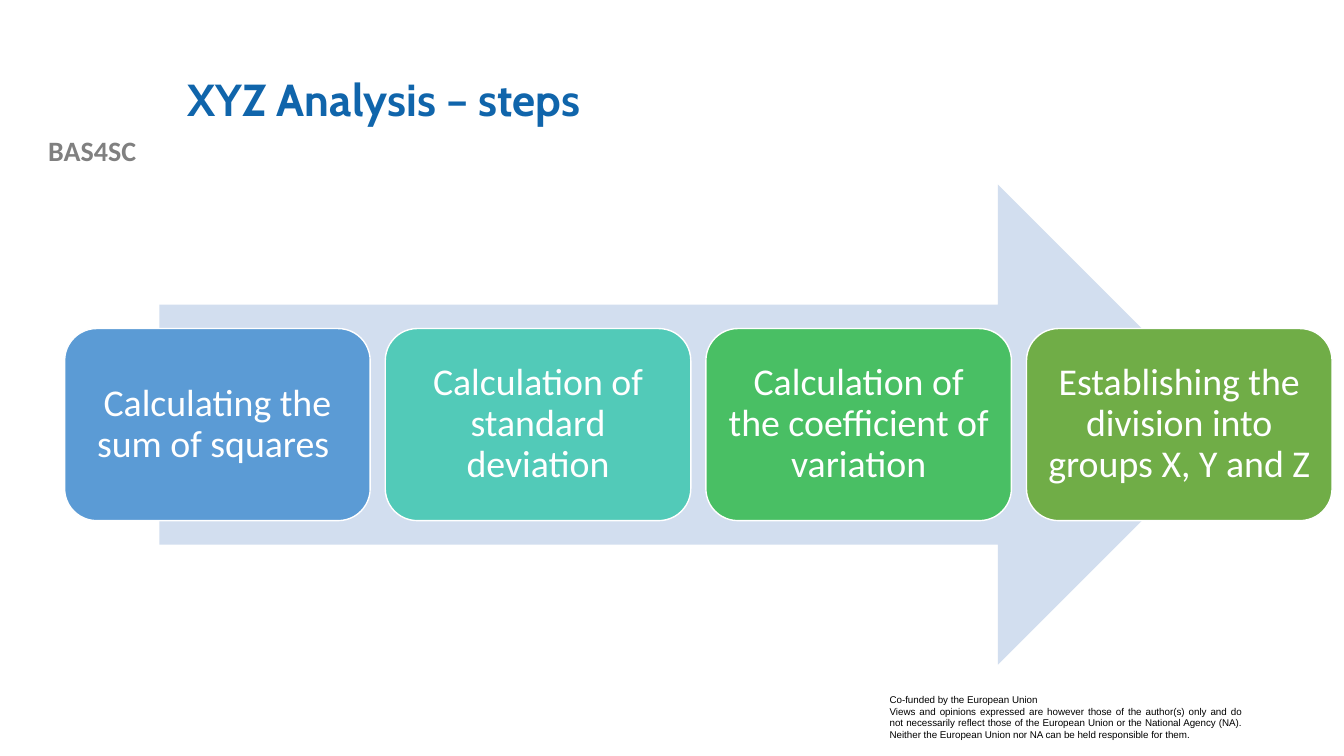
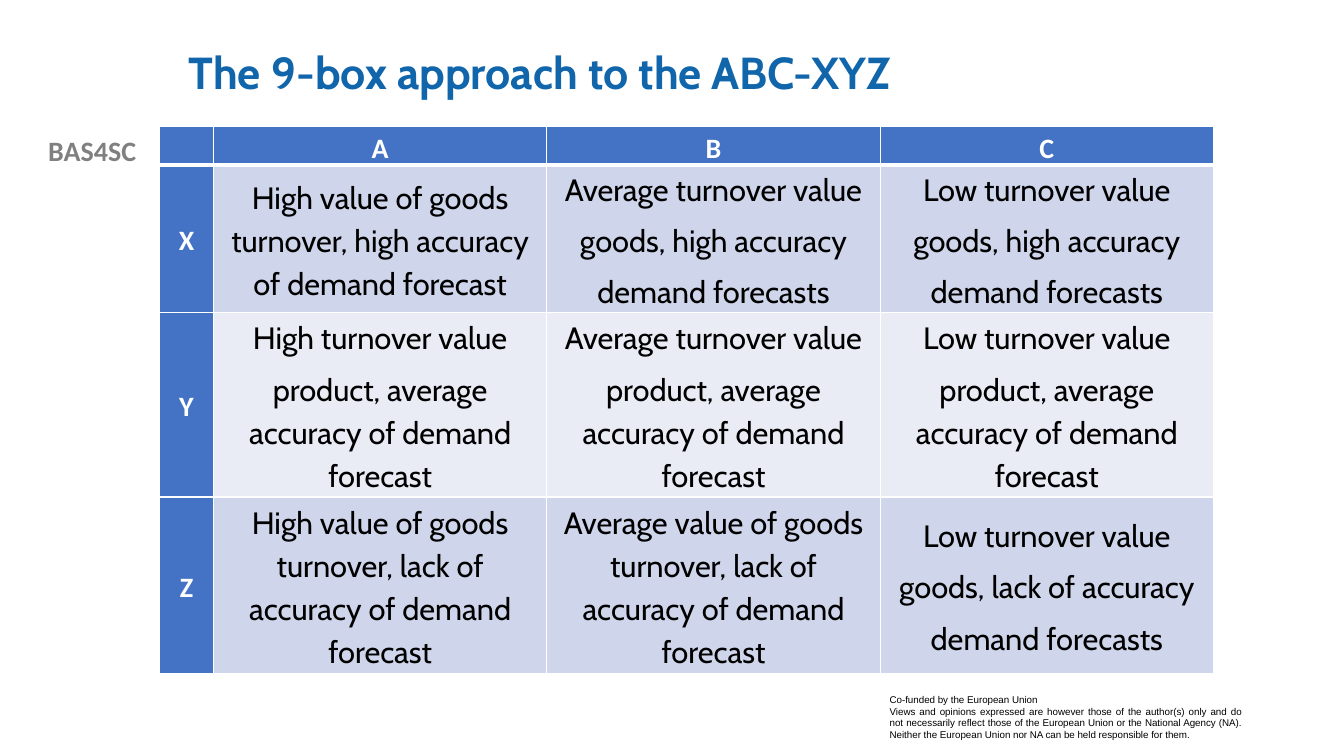
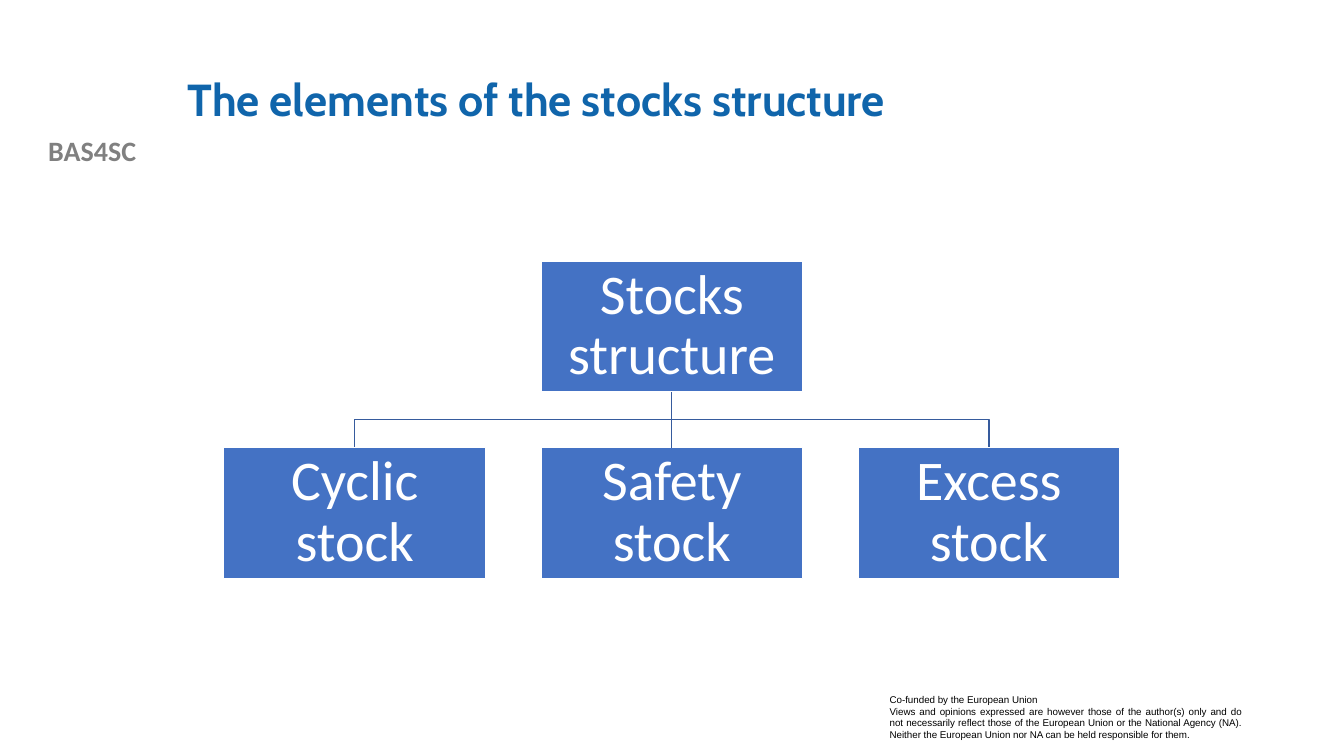
import pptx
import pptx.util
import pptx.dml.color
import pptx.enum.shapes
import pptx.enum.text
import pptx.oxml
import pptx.oxml.ns

Cm = pptx.util.Cm
Pt = pptx.util.Pt
MSO = pptx.enum.shapes.MSO_SHAPE
ALIGN = pptx.enum.text.PP_ALIGN
MIDDLE = pptx.enum.text.MSO_ANCHOR.MIDDLE
rgb = pptx.dml.color.RGBColor.from_string

BLUE = "4472C4"
WHITE = "FFFFFF"
LINE = "365B9D"


def write(tf, lines, size, font, color, bold=False, align=ALIGN.CENTER, spacing=0.9, after=0):
    tf.word_wrap = True
    for i, line in enumerate(lines):
        p = tf.paragraphs[0] if i == 0 else tf.add_paragraph()
        p.alignment = align
        p.line_spacing = spacing
        p.space_after = Pt(after)
        r = p.add_run()
        r.text = line
        r.font.size = Pt(size)
        r.font.name = font
        r.font.bold = bold
        r.font.color.rgb = rgb(color)


def add_box(s, kind, x, y, w, h, fill, line=None, inset=None):
    sp = s.shapes.add_shape(kind, Cm(x), Cm(y), Cm(w), Cm(h))
    sp.shadow.inherit = False
    sp.fill.solid()
    sp.fill.fore_color.rgb = rgb(fill)
    if line:
        sp.line.color.rgb = rgb(line)
        sp.line.width = Pt(1)
    else:
        sp.line.fill.background()
    tf = sp.text_frame
    tf.vertical_anchor = MIDDLE
    if inset is not None:
        tf.margin_left = tf.margin_right = tf.margin_top = tf.margin_bottom = Cm(inset)
    return sp


prs = pptx.Presentation()
prs.slide_width = Cm(33.87)
prs.slide_height = Cm(19.05)

FOOTER = [
    "Co-funded by the European Union",
    "Views and opinions expressed are however those of the author(s) only and do not necessarily "
    "reflect those of the European Union or the National Agency (NA). Neither the European Union "
    "nor NA can be held responsible for them.",
]
TITLES = [
    ("XYZ Analysis – steps", 4.47, 1.02, 27.08),
    ("The 9-box approach to the ABC-XYZ", 4.5, 0.33, 27.28),
    ("The elements of the stocks structure", 4.47, 1.02, 27.08),
]
slides = []
for title, x, y, w in TITLES:
    s = prs.slides.add_slide(prs.slide_layouts[5])
    sp = s.shapes.title
    sp.left, sp.top, sp.width, sp.height = Cm(x), Cm(y), Cm(w), Cm(3.1)
    tf = sp.text_frame
    tf.auto_size = pptx.enum.text.MSO_AUTO_SIZE.NONE
    tf.vertical_anchor = MIDDLE
    write(tf, [title], 32, "Cabin", "1065AB", True, ALIGN.LEFT)
    sp = s.shapes.add_textbox(0, Cm(3.25), Cm(4.65), Cm(1.12))
    write(sp.text_frame, ["BAS4SC"], 20, "Calibri", "808080", True, spacing=1.0)
    sp = add_box(s, MSO.RECTANGLE, 22.17, 17.35, 9.37, 1.45, WHITE)
    sp.text_frame.vertical_anchor = pptx.enum.text.MSO_ANCHOR.TOP
    write(sp.text_frame, FOOTER, 7, "Arial", "000000", align=ALIGN.JUSTIFY, spacing=1.0)
    slides.append(s)

s = slides[0]
add_box(s, MSO.RIGHT_ARROW, 4.02, 4.65, 27.18, 12.1, "D2DEEF")
STEPS = [
    ("Calculating the sum of squares ", "5B9BD5"),
    ("Calculation of standard deviation", "52CAB8"),
    ("Calculation of the coefficient of variation", "49BF64"),
    ("Establishing the division into groups X, Y and Z", "70AD47"),
]
for i, (text, color) in enumerate(STEPS):
    sp = add_box(s, MSO.ROUNDED_RECTANGLE, 1.63 + 8.08 * i, 8.28, 7.7, 4.84, color, WHITE, 0.27)
    write(sp.text_frame, [text], 27, "Calibri", WHITE)

s = slides[1]
ROWS = [
    [[], ["A"], ["B"], ["C"]],
    [
        ["X"],
        ["High value of goods turnover, high accuracy of demand forecast"],
        ["Average turnover value", "goods, high accuracy", "demand forecasts"],
        ["Low turnover value", "goods, high accuracy", "demand forecasts"],
    ],
    [
        ["Y"],
        ["High turnover value", "product, average accuracy of demand forecast"],
        ["Average turnover value", "product, average accuracy of demand forecast"],
        ["Low turnover value", "product, average accuracy of demand forecast"],
    ],
    [
        ["Z"],
        ["High value of goods turnover, lack of accuracy of demand forecast"],
        ["Average value of goods turnover, lack of accuracy of demand forecast"],
        ["Low turnover value", "goods, lack of accuracy", "demand forecasts"],
    ],
]
table = s.shapes.add_table(4, 4, Cm(4.02), Cm(3.18), Cm(26.56), Cm(13.75)).table
table.horz_banding = False
for col, w in zip(table.columns, [1.36, 8.4, 8.4, 8.4]):
    col.width = Cm(w)
for row, h in zip(table.rows, [0.94, 3.72, 4.65, 4.44]):
    row.height = Cm(h)
for i, row in enumerate(ROWS):
    for j, lines in enumerate(row):
        cell = table.cell(i, j)
        head = i == 0 or j == 0
        cell.margin_left = cell.margin_right = Cm(0.16)
        cell.margin_top = cell.margin_bottom = 0
        if i:
            cell.vertical_anchor = MIDDLE
        cell.fill.solid()
        cell.fill.fore_color.rgb = rgb(BLUE if head else "CFD5EA" if i % 2 else "E9EBF5")
        if head:
            write(cell.text_frame, lines, 20, "Calibri", WHITE, True, spacing=1.15, after=6)
        else:
            write(cell.text_frame, lines, 22, "Cabin", "000000", spacing=1.15, after=6)
        tcPr = cell._tc.get_or_add_tcPr()
        for k, side in enumerate("LRTB"):
            thick = (i, side) in [(0, "B"), (1, "T")]
            tcPr.insert(k, pptx.oxml.parse_xml(
                f'<a:ln{side} {pptx.oxml.ns.nsdecls("a")} w="{Pt(3 if thick else 1)}">'
                f'<a:solidFill><a:srgbClr val="{WHITE}"/></a:solidFill></a:ln{side}>'))

s = slides[2]
CENTER, PITCH, W, H = 16.93, 7.99, 6.6, 3.3
ROOT_Y, CHILD_Y = 6.58, 11.28
BEND_Y = (ROOT_Y + H + CHILD_Y) / 2
for side in (1, -1):
    x = CENTER + side * PITCH
    fb = s.shapes.build_freeform(Cm(CENTER), Cm(ROOT_Y + H))
    fb.add_line_segments(
        [(Cm(CENTER), Cm(BEND_Y)), (Cm(x), Cm(BEND_Y)), (Cm(x), Cm(CHILD_Y))], close=False)
    sp = fb.convert_to_shape()
    sp.shadow.inherit = False
    sp.fill.background()
    sp.line.color.rgb = rgb(LINE)
    sp.line.width = Pt(1)
NODES = [
    ("Stocks structure", 0, ROOT_Y),
    ("Cyclic stock", -1, CHILD_Y),
    ("Safety stock", 0, CHILD_Y),
    ("Excess stock", 1, CHILD_Y),
]
boxes = []
for text, col, y in NODES:
    sp = add_box(s, MSO.RECTANGLE, CENTER + col * PITCH - W / 2, y, W, H, BLUE, WHITE, 0.07)
    write(sp.text_frame, [text], 40, "Calibri", WHITE)
    boxes.append(sp)
cx = s.shapes.add_connector(
    pptx.enum.shapes.MSO_CONNECTOR.STRAIGHT, Cm(CENTER), Cm(ROOT_Y + H), Cm(CENTER), Cm(CHILD_Y))
cx.begin_connect(boxes[0], 2)
cx.end_connect(boxes[2], 0)
cx.line.color.rgb = rgb(LINE)
cx.line.width = Pt(1)
cx._element.spPr.append(pptx.oxml.parse_xml(f'<a:effectLst {pptx.oxml.ns.nsdecls("a")}/>'))

prs.save("out.pptx")
